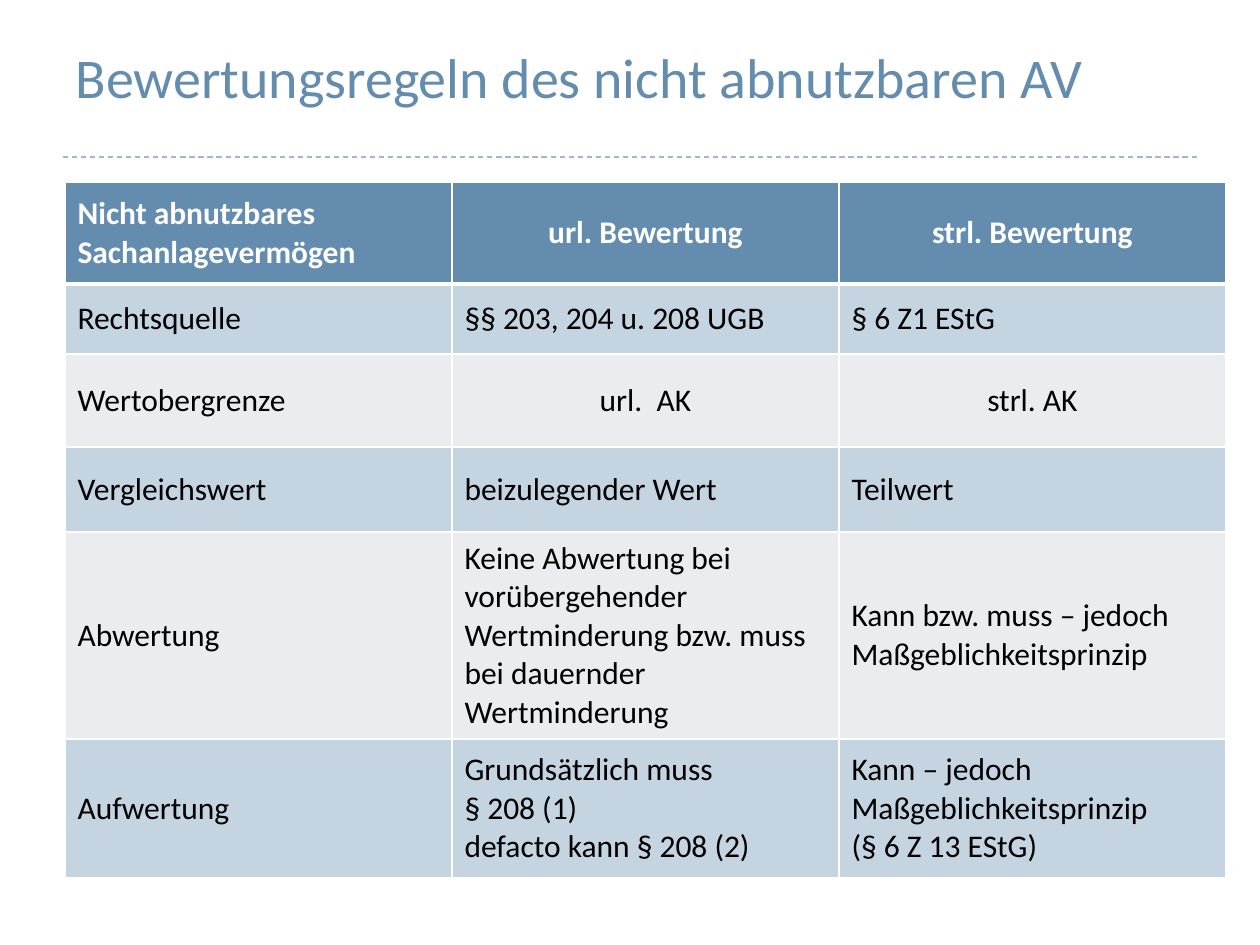
from lxml.etree import SubElement
from pptx import Presentation
from pptx.dml.color import RGBColor
from pptx.enum.dml import MSO_LINE
from pptx.enum.shapes import MSO_CONNECTOR
from pptx.enum.text import MSO_ANCHOR, PP_ALIGN
from pptx.oxml import parse_xml
from pptx.oxml.ns import nsdecls, qn
from pptx.util import Emu, Pt

PIXELS_PER_INCH = 126
FONT = "Calibri"
BLUE, LIGHT_BLUE, LIGHT_GRAY = "638CAE", "C5D4E1", "EBECF0"
WHITE, BLACK, RULE_COLOR = "FFFFFF", "000000", "9FB8CD"

COLUMN_WIDTH = 387
ROW_HEIGHTS = [102, 70, 93, 85, 207, 139]
CENTERED_ROWS = (0, 2)
ROWS = [
    ["Nicht abnutzbares Sachanlagevermögen", "url. Bewertung", "strl. Bewertung"],
    ["Rechtsquelle", "§§ 203, 204 u. 208 UGB", "§ 6 Z1 EStG"],
    ["Wertobergrenze", "url.  AK", "strl. AK"],
    ["Vergleichswert", "beizulegender Wert", "Teilwert"],
    [
        "Abwertung",
        "Keine Abwertung bei vorübergehender Wertminderung bzw. muss bei dauernder Wertminderung",
        "Kann bzw. muss – jedoch\nMaßgeblichkeitsprinzip",
    ],
    [
        "Aufwertung",
        "Grundsätzlich muss\n§ 208 (1)\ndefacto kann § 208 (2)",
        "Kann – jedoch Maßgeblichkeitsprinzip\n(§ 6 Z 13 EStG)",
    ],
]


def px(length):
    """Turn pixels into EMU."""
    return Emu(round(length * 914400 / PIXELS_PER_INCH))


def color(value):
    """Turn a hex string into a colour."""
    return RGBColor.from_string(value)


def format_text(text_frame, size, text_color, bold=False, alignment=PP_ALIGN.LEFT):
    """Format every paragraph and run of a text frame."""
    for paragraph in text_frame.paragraphs:
        paragraph.alignment = alignment
        for run in paragraph.runs:
            run.font.name = FONT
            run.font.size = Pt(size)
            run.font.bold = bold
            run.font.color.rgb = color(text_color)


def add_title(slide, text):
    """Place and fill the title placeholder."""
    title = slide.shapes.title
    title.left, title.top, title.width, title.height = px(63), px(0), px(1134), px(116)
    title.text_frame.text = text
    title.text_frame.word_wrap = True
    title.text_frame.vertical_anchor = MSO_ANCHOR.BOTTOM
    format_text(title.text_frame, 32, BLUE)


def add_rule(slide):
    """Draw the dashed line below the title."""
    rule = slide.shapes.add_connector(
        MSO_CONNECTOR.STRAIGHT, px(63), px(157), px(1197), px(157)
    )
    rule.line.color.rgb = color(RULE_COLOR)
    rule.line.width = Pt(0.75)
    rule.line.dash_style = MSO_LINE.DASH
    SubElement(rule._element.spPr, qn("a:effectLst"))


def set_borders(cell, top, bottom):
    """Give a cell white borders with the given top and bottom widths in points."""
    properties = cell._tc.get_or_add_tcPr()
    widths = {"lnL": 1, "lnR": 1, "lnT": top, "lnB": bottom}
    for position, (tag, width) in enumerate(widths.items()):
        border = parse_xml(
            f'<a:{tag} {nsdecls("a")} w="{Pt(width)}"><a:solidFill>'
            f'<a:srgbClr val="{WHITE}"/></a:solidFill></a:{tag}>'
        )
        properties.insert(position, border)


def fill_cell(cell, text, row, column):
    """Write and format one cell according to its row and column."""
    is_header = row == 0
    is_centered = row in CENTERED_ROWS and column > 0
    cell.text_frame.text = text
    cell.vertical_anchor = MSO_ANCHOR.MIDDLE
    format_text(
        cell.text_frame,
        18,
        WHITE if is_header else BLACK,
        is_header,
        PP_ALIGN.CENTER if is_centered else PP_ALIGN.LEFT,
    )
    cell.fill.solid()
    band = LIGHT_BLUE if row % 2 else LIGHT_GRAY
    cell.fill.fore_color.rgb = color(BLUE if is_header else band)
    set_borders(cell, top=3 if row == 1 else 1, bottom=3 if is_header else 1)


def add_valuation_table(slide):
    """Add the table of valuation rules."""
    column_count = len(ROWS[0])
    table = slide.shapes.add_table(
        len(ROWS), column_count, px(65), px(182),
        px(COLUMN_WIDTH * column_count), px(sum(ROW_HEIGHTS)),
    ).table
    for column in table.columns:
        column.width = px(COLUMN_WIDTH)
    for row, (height, texts) in enumerate(zip(ROW_HEIGHTS, ROWS)):
        table.rows[row].height = px(height)
        for column, text in enumerate(texts):
            fill_cell(table.cell(row, column), text, row, column)


def main():
    """Build and save the slide."""
    presentation = Presentation()
    presentation.slide_width, presentation.slide_height = px(1260), px(945)
    slide = presentation.slides.add_slide(presentation.slide_layouts[5])
    add_rule(slide)
    add_title(slide, "Bewertungsregeln des nicht abnutzbaren AV")
    add_valuation_table(slide)
    presentation.save("out.pptx")


if __name__ == "__main__":
    main()
